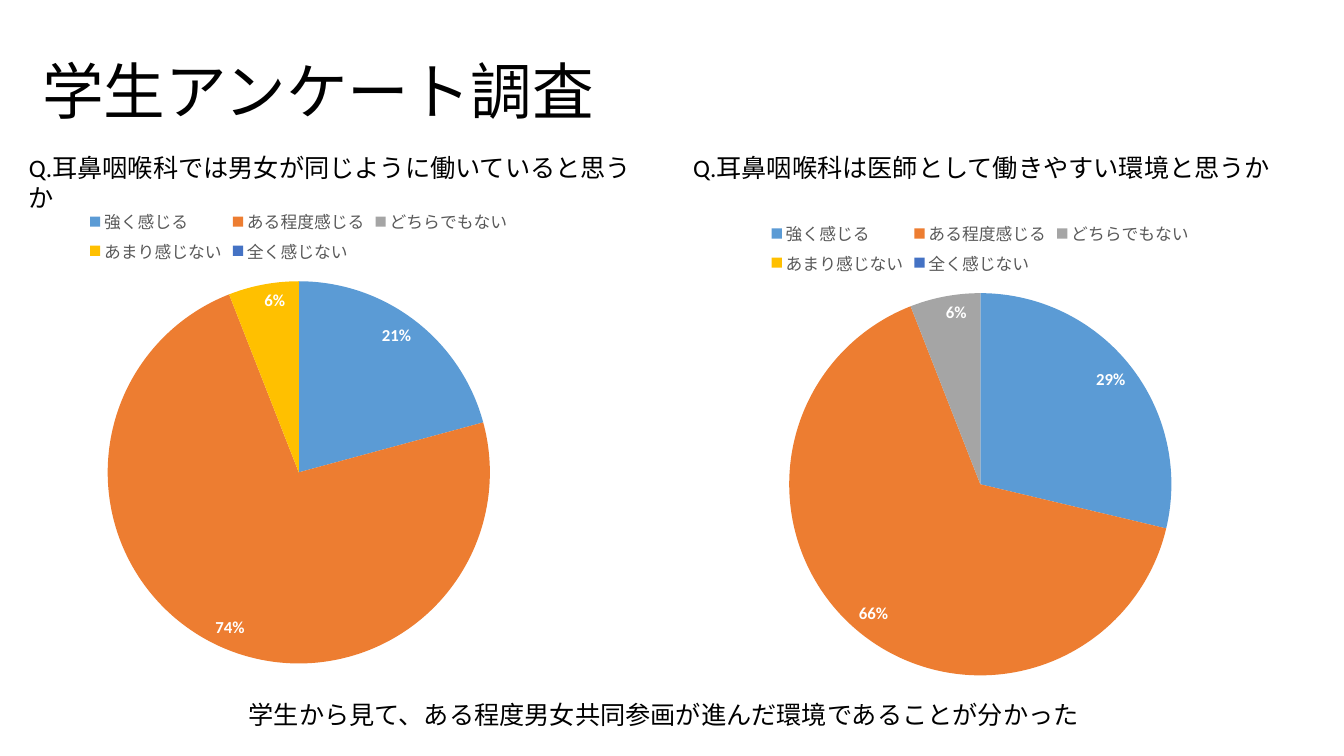
"""Build the student survey slide with two pie charts."""
import pptx
import pptx.chart.data
import pptx.dml.color
import pptx.enum.chart
import pptx.enum.text
import pptx.util

Cm = pptx.util.Cm
FONT = "Calibri"
ANSWERS = ["強く感じる", "ある程度感じる", "どちらでもない", "あまり感じない", "全く感じない"]
COLORS = ["5B9BD5", "ED7D31", "A5A5A5", "FFC000", "4472C4"]


def rgb(hex_color):
    """Turn a hex string into a colour."""
    return pptx.dml.color.RGBColor.from_string(hex_color)


def style_font(font, size, color, bold=False):
    """Set the typeface, size, colour and weight of a font."""
    font.name = FONT
    font.size = pptx.util.Pt(size)
    font.color.rgb = rgb(color)
    font.bold = bold


def add_title(slide, text, left, top, width, height):
    """Place and format the title placeholder."""
    sp = slide.shapes.title
    sp.left, sp.top, sp.width, sp.height = Cm(left), Cm(top), Cm(width), Cm(height)
    tf = sp.text_frame
    tf.text = text
    tf.auto_size = pptx.enum.text.MSO_AUTO_SIZE.NONE
    tf.vertical_anchor = pptx.enum.text.MSO_ANCHOR.MIDDLE
    p = tf.paragraphs[0]
    p.alignment = pptx.enum.text.PP_ALIGN.LEFT
    p.line_spacing = 0.9
    style_font(p.runs[0].font, 44, "000000")


def add_text(slide, text, left, top, width):
    """Add a wrapping text box that grows with its text."""
    sp = slide.shapes.add_textbox(Cm(left), Cm(top), Cm(width), Cm(1.02))
    tf = sp.text_frame
    tf.word_wrap = True
    tf.auto_size = pptx.enum.text.MSO_AUTO_SIZE.SHAPE_TO_FIT_TEXT
    tf.text = text
    style_font(tf.paragraphs[0].runs[0].font, 18, "000000")


def add_pie(slide, values, left, top, width):
    """Add a pie chart of the answers, hiding the labels of zero slices."""
    data = pptx.chart.data.CategoryChartData()
    data.categories = ANSWERS
    data.add_series("Series 1", values)
    chart = slide.shapes.add_chart(
        pptx.enum.chart.XL_CHART_TYPE.PIE,
        Cm(left), Cm(top), Cm(width), Cm(12.09), data).chart
    style_font(chart.font, 10, "000000")
    chart.has_title = False
    chart.has_legend = True
    chart.legend.position = pptx.enum.chart.XL_LEGEND_POSITION.TOP
    chart.legend.include_in_layout = False
    style_font(chart.legend.font, 12, "595959")

    plot = chart.plots[0]
    plot.vary_by_categories = True
    for i, color in enumerate(COLORS):
        fill = plot.series[0].points[i].format.fill
        fill.solid()
        fill.fore_color.rgb = rgb(color)

    labels = plot.series[0].data_labels
    labels.show_value = True
    labels.number_format = '0"%";;;'
    labels.number_format_is_linked = False
    labels.position = pptx.enum.chart.XL_LABEL_POSITION.INSIDE_END
    style_font(labels.font, 12, "FFFFFF", bold=True)


def main():
    """Build and save the slide."""
    prs = pptx.Presentation()
    prs.slide_width, prs.slide_height = Cm(33.87), Cm(19.05)
    s = prs.slides.add_slide(prs.slide_layouts[5])
    add_title(s, "学生アンケート調査", 0.81, 0.53, 29.21, 3.68)
    add_pie(s, [21, 74, 0, 6, 0], 0.23, 4.98, 14.6)
    add_pie(s, [29, 66, 6, 0, 0], 17.58, 5.28, 14.25)
    add_text(s, "Q.耳鼻咽喉科では男女が同じように働いていると思うか", 0.48, 3.71, 15.85)
    add_text(s, "Q.耳鼻咽喉科は医師として働きやすい環境と思うか", 17.22, 3.71, 15.16)
    add_text(s, "学生から見て、ある程度男女共同参画が進んだ環境であることが分かった", 6.02, 17.5, 24.89)
    prs.save("out.pptx")


if __name__ == "__main__":
    main()
